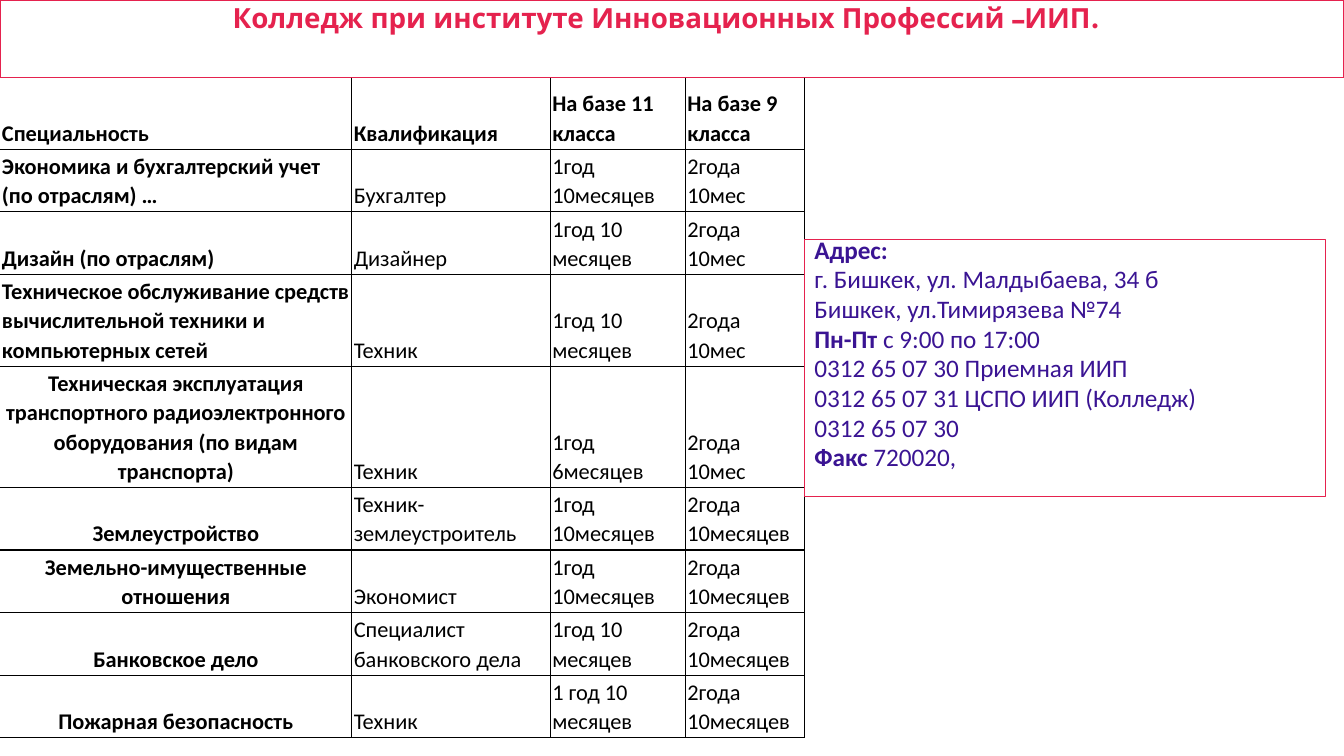
from lxml.etree import SubElement
from pptx import Presentation
from pptx.dml.color import RGBColor
from pptx.enum.shapes import MSO_SHAPE
from pptx.enum.text import MSO_ANCHOR, PP_ALIGN
from pptx.oxml.ns import qn
from pptx.util import Pt

COLORS = {"white": "FFFFFF", "red": "E5224E", "violet": "3A1493", "black": "000000"}
COLUMN_WIDTHS = [251.3, 141.8, 96.5, 85]
TABLE_TOP = 55.4
HEADER_HEIGHT = 51.2
LINE_HEIGHT = 20.9
CELL_INSET = 1.44
FIRST_CENTERED_ROW = 4

HEADER = ["Специальность", "Квалификация", "На базе 11 класса", "На базе 9 класса"]
PROGRAMS = [
    (2, "Экономика и бухгалтерский учет (по отраслям) …", "Бухгалтер",
     "1год 10месяцев", "2года 10мес"),
    (2, "Дизайн (по отраслям)", "Дизайнер", "1год 10 месяцев", "2года 10мес"),
    (3, "Техническое обслуживание средств вычислительной техники и компьютерных сетей",
     "Техник", "1год 10 месяцев", "2года 10мес"),
    (4, "Техническая эксплуатация транспортного радиоэлектронного оборудования "
     "(по видам транспорта)", "Техник", "1год 6месяцев", "2года 10мес"),
    (2, "Землеустройство", "Техник-землеустроитель", "1год 10месяцев", "2года 10месяцев"),
    (2, "Земельно-имущественные отношения", "Экономист",
     "1год 10месяцев", "2года 10месяцев"),
    (2, "Банковское дело", "Специалист банковского дела",
     "1год 10 месяцев", "2года 10месяцев"),
    (2, "Пожарная безопасность", "Техник", "1 год 10 месяцев", "2года 10месяцев"),
]
CONTACTS = [
    [("Адрес:", True)],
    [("г. Бишкек, ул. Малдыбаева, 34 б", False)],
    [("Бишкек, ул.Тимирязева №74", False)],
    [("Пн-Пт", True), (" с 9:00 по 17:00", False)],
    [("0312 65 07 30 Приемная ИИП", False)],
    [("0312 65 07 31 ЦСПО ИИП (Колледж)", False)],
    [("0312 65 07 30", False)],
    [("Факс ", True), ("720020,", False)],
]


def write(frame, paragraphs, size, color, font="Calibri", align=PP_ALIGN.LEFT, spacing=1.0):
    frame.word_wrap = True
    for index, runs in enumerate(paragraphs):
        paragraph = frame.add_paragraph() if index else frame.paragraphs[0]
        paragraph.alignment = align
        paragraph.line_spacing = spacing
        for text, bold in runs:
            run = paragraph.add_run()
            run.text = text
            run.font.name = font
            run.font.size = Pt(size)
            run.font.bold = bold
            run.font.color.rgb = RGBColor.from_string(COLORS[color])


def add_framed_box(slide, left, top, width, height, anchor, insets):
    box = slide.shapes.add_shape(
        MSO_SHAPE.RECTANGLE, Pt(left), Pt(top), Pt(width), Pt(height))
    box.shadow.inherit = False
    box.fill.solid()
    box.fill.fore_color.rgb = RGBColor.from_string(COLORS["white"])
    box.line.color.rgb = RGBColor.from_string(COLORS["red"])
    box.line.width = Pt(1)
    frame = box.text_frame
    frame.vertical_anchor = anchor
    frame.margin_left, frame.margin_top, frame.margin_right, frame.margin_bottom = map(Pt, insets)
    return frame


def set_borders(cell, visible):
    properties = cell._tc.get_or_add_tcPr()
    for index, (side, shown) in enumerate(visible.items()):
        border = SubElement(properties, qn(f"a:ln{side}"), w=str(Pt(1)))
        if shown:
            fill = SubElement(border, qn("a:solidFill"))
            SubElement(fill, qn("a:srgbClr"), val=COLORS["black"])
        else:
            SubElement(border, qn("a:noFill"))
        properties.insert(index, border)


def add_program_table(slide):
    heights = [HEADER_HEIGHT] + [
        lines * LINE_HEIGHT + 2 * CELL_INSET for lines, *_ in PROGRAMS]
    rows = [HEADER] + [texts for _, *texts in PROGRAMS]
    table = slide.shapes.add_table(
        len(rows), len(HEADER), Pt(0), Pt(TABLE_TOP),
        Pt(sum(COLUMN_WIDTHS)), Pt(sum(heights))).table
    table.first_row = table.horz_banding = False
    for column, width in zip(table.columns, COLUMN_WIDTHS):
        column.width = Pt(width)
    for r, (texts, height) in enumerate(zip(rows, heights)):
        table.rows[r].height = Pt(height)
        for c, text in enumerate(texts):
            cell = table.cell(r, c)
            cell.fill.background()
            cell.vertical_anchor = MSO_ANCHOR.BOTTOM
            cell.margin_left = cell.margin_right = Pt(CELL_INSET)
            cell.margin_top = cell.margin_bottom = Pt(CELL_INSET)
            centered = c == 0 and r >= FIRST_CENTERED_ROW
            write(cell.text_frame, [[(text, r == 0 or c == 0)]], size=16, color="black",
                  align=PP_ALIGN.CENTER if centered else PP_ALIGN.LEFT, spacing=1.07)
            set_borders(cell, {"L": c > 0, "R": True, "T": r > 0, "B": True})


def main():
    presentation = Presentation()
    presentation.slide_width, presentation.slide_height = Pt(960), Pt(540)
    slide = presentation.slides.add_slide(presentation.slide_layouts[6])

    heading = add_framed_box(slide, 0, 0, 960, TABLE_TOP, MSO_ANCHOR.TOP, (7.2, 3.6, 15.8, 3.6))
    write(heading, [[("Колледж при институте Инновационных Профессий –ИИП.", True)]],
          size=19.8, color="red", font="League Spartan", align=PP_ALIGN.CENTER, spacing=0.9)

    add_program_table(slide)

    contacts = add_framed_box(slide, sum(COLUMN_WIDTHS), 171.2, 372.4, 183.6,
                              MSO_ANCHOR.MIDDLE, (7.2, 0, 7.2, 20))
    write(contacts, CONTACTS, size=18, color="violet", spacing=0.98)

    presentation.save("out.pptx")


if __name__ == "__main__":
    main()
